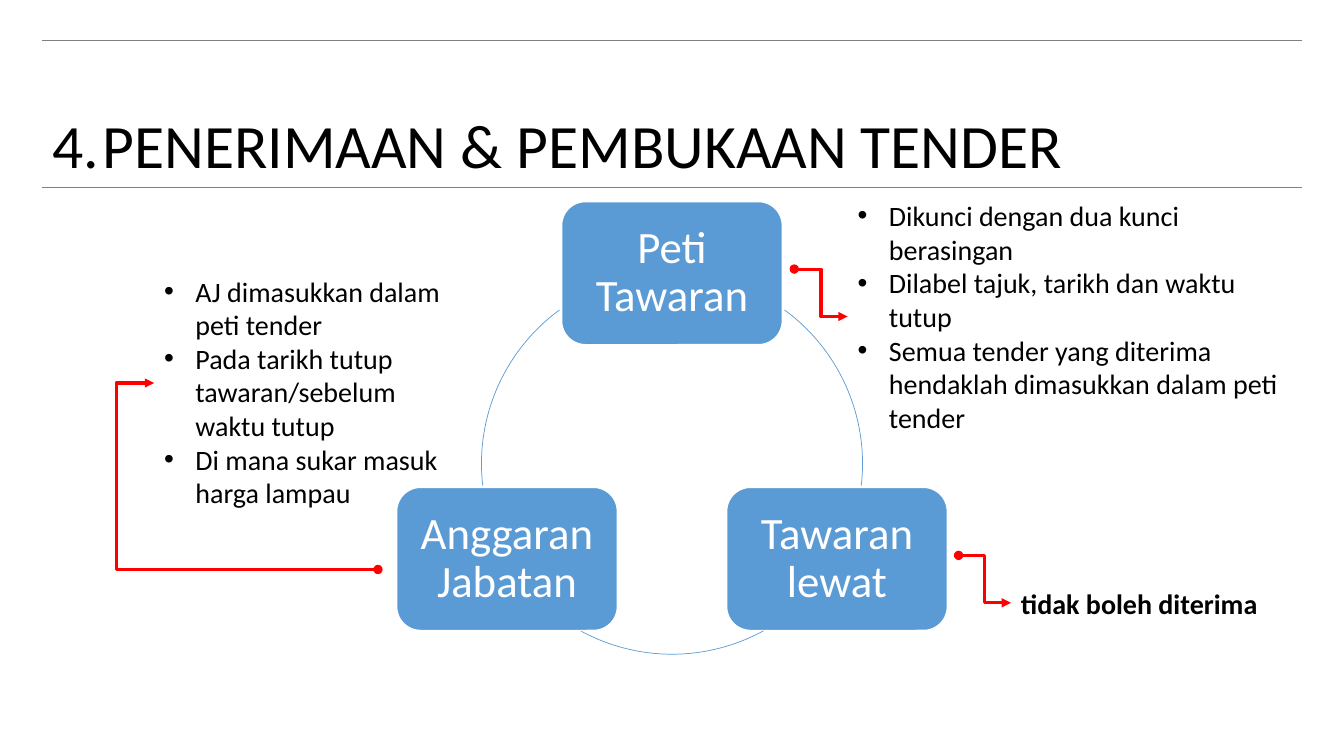
from math import cos, radians, sin

from lxml.etree import SubElement
from pptx import Presentation
from pptx.dml.color import RGBColor
from pptx.enum.shapes import MSO_CONNECTOR, MSO_SHAPE
from pptx.enum.text import MSO_ANCHOR, MSO_AUTO_SIZE, PP_ALIGN
from pptx.oxml.ns import qn
from pptx.util import Inches, Pt

BLACK = RGBColor(0x00, 0x00, 0x00)
WHITE = RGBColor(0xFF, 0xFF, 0xFF)
GREY = RGBColor(0x80, 0x80, 0x80)
BLUE = RGBColor(0x5B, 0x9B, 0xD5)
RED = RGBColor(0xFF, 0x00, 0x00)

# The slide is a grid of 80 columns by 45 rows of square cells.
COLUMNS, ROWS = 80, 45
SLIDE_WIDTH = Inches(13.33)
CELL = SLIDE_WIDTH / COLUMNS

TITLE_FORMAT = {"name": "Calibri", "size": Pt(44), "bold": False}
NODE_FORMAT = {"name": "Calibri", "size": Pt(32)}
NOTE_FORMAT = {"name": "Calibri", "size": Pt(20)}
LABEL_FORMAT = {**NOTE_FORMAT, "bold": True}

CENTRE_X, CENTRE_Y, RADIUS = 40, 27.6, 11.34
NODE_WIDTH, NODE_HEIGHT = 13.14, 8.52
# Angles run clockwise from the right, in degrees.
NODES = [("Peti Tawaran", 270), ("Tawaran lewat", 30), ("Anggaran Jabatan", 150)]
ARCS = [(306.2, 6.6), (61.3, 118.7), (173.4, 233.8)]

BOX_NOTES = [
    "Dikunci dengan dua kunci berasingan",
    "Dilabel tajuk, tarikh dan waktu tutup",
    "Semua tender yang diterima hendaklah dimasukkan dalam peti tender",
]
ESTIMATE_NOTES = [
    "AJ dimasukkan dalam peti tender",
    "Pada tarikh tutup tawaran/sebelum waktu tutup",
    "Di mana sukar masuk harga lampau",
]


def cells(*counts):
    """Turn counts of grid cells into lengths."""
    return [round(count * CELL) for count in counts]


def set_font(para, values, color):
    for name, value in values.items():
        setattr(para.font, name, value)
    para.font.color.rgb = color


def set_title(slide, text):
    title = slide.shapes.title
    title.left, title.top, title.width, title.height = cells(2.5, 2.4, 75, 8.7)
    frame = title.text_frame
    frame.text = text
    frame.word_wrap = True
    frame.auto_size = MSO_AUTO_SIZE.NONE
    frame.vertical_anchor = MSO_ANCHOR.BOTTOM
    para = frame.paragraphs[0]
    para.alignment = PP_ALIGN.LEFT
    para.line_spacing = 0.9
    set_font(para, TITLE_FORMAT, BLACK)


def add_line(slide, kind, start, end, color, width):
    line = slide.shapes.add_connector(kind, *cells(*start, *end))
    line.line.color.rgb = color
    line.line.width = Pt(width)
    SubElement(line._element.spPr, qn("a:effectLst"))
    return line


def add_arrow(slide, start, end, bend=None):
    """Add an elbow arrow; bend is the share of its width where it turns."""
    arrow = add_line(slide, MSO_CONNECTOR.ELBOW, start, end, RED, 2.25)
    properties = arrow._element.spPr
    outline = properties.get_or_add_ln()
    SubElement(outline, qn("a:headEnd"), type="oval")
    SubElement(outline, qn("a:tailEnd"), type="triangle")
    if bend is not None:
        guides = properties.find(qn("a:prstGeom")).get_or_add_avLst()
        SubElement(guides, qn("a:gd"), name="adj1", fmla=f"val {round(bend * 100000)}")


def add_node(slide, text, angle):
    left = CENTRE_X + RADIUS * cos(radians(angle)) - NODE_WIDTH / 2
    top = CENTRE_Y + RADIUS * sin(radians(angle)) - NODE_HEIGHT / 2
    node = slide.shapes.add_shape(
        MSO_SHAPE.ROUNDED_RECTANGLE, *cells(left, top, NODE_WIDTH, NODE_HEIGHT))
    node.shadow.inherit = False
    node.fill.solid()
    node.fill.fore_color.rgb = BLUE
    node.line.color.rgb = WHITE
    node.line.width = Pt(1)
    frame = node.text_frame
    frame.word_wrap = True
    frame.vertical_anchor = MSO_ANCHOR.MIDDLE
    for side in ("left", "top", "right", "bottom"):
        setattr(frame, f"margin_{side}", Inches(0.13))
    para = frame.paragraphs[0]
    para.text = text
    para.alignment = PP_ALIGN.CENTER
    para.line_spacing = 0.9
    set_font(para, NODE_FORMAT, WHITE)


def add_arc(slide, start, end):
    arc = slide.shapes.add_shape(MSO_SHAPE.ARC, *cells(
        CENTRE_X - RADIUS, CENTRE_Y - RADIUS, 2 * RADIUS, 2 * RADIUS))
    arc.shadow.inherit = False
    arc.fill.background()
    arc.line.color.rgb = BLUE
    arc.line.width = Pt(0.5)
    for index, angle in enumerate((start, end)):
        arc.adjustments[index] = angle * 0.6  # 60000ths of a degree over 100000


def add_bullet(para):
    properties = para._p.get_or_add_pPr()
    indent = Inches(0.31)
    properties.set("marL", str(indent))
    properties.set("indent", str(-indent))
    SubElement(properties, qn("a:buFont"), typeface="Arial")
    SubElement(properties, qn("a:buChar"), char="•")


def add_text(slide, place, lines, values, bulleted):
    box = slide.shapes.add_textbox(*cells(*place))
    frame = box.text_frame
    frame.word_wrap = bulleted
    frame.auto_size = MSO_AUTO_SIZE.SHAPE_TO_FIT_TEXT
    for index, line in enumerate(lines):
        para = frame.add_paragraph() if index else frame.paragraphs[0]
        para.text = line
        if bulleted:
            add_bullet(para)
        set_font(para, values, BLACK)


def main():
    deck = Presentation()
    deck.slide_width = SLIDE_WIDTH
    deck.slide_height = round(ROWS * CELL)
    slide = deck.slides.add_slide(deck.slide_layouts.get_by_name("Title Only"))

    for row in (2.4, 11.16):
        add_line(slide, MSO_CONNECTOR.STRAIGHT, (2.5, row), (77.5, row), GREY, 1)
    set_title(slide, "4.\tPENERIMAAN & PEMBUKAAN TENDER")

    for (text, angle), arc in zip(NODES, ARCS):
        add_node(slide, text, angle)
        add_arc(slide, *arc)

    add_text(slide, (50.46, 11.52, 27.06, 14.76), BOX_NOTES, NOTE_FORMAT, True)
    add_arrow(slide, (47.28, 16.02), (50.46, 18.84))
    add_text(slide, (60.18, 34.62, 15.42, 2.64), ["tidak boleh diterima"],
             LABEL_FORMAT, False)
    add_arrow(slide, (57.06, 33.06), (60.18, 35.88))
    add_text(slide, (9.18, 16.02, 18.9, 14.76), ESTIMATE_NOTES, NOTE_FORMAT, True)
    add_arrow(slide, (22.5, 33.9), (9.18, 22.8), bend=1.17)

    deck.save("out.pptx")


if __name__ == "__main__":
    main()
